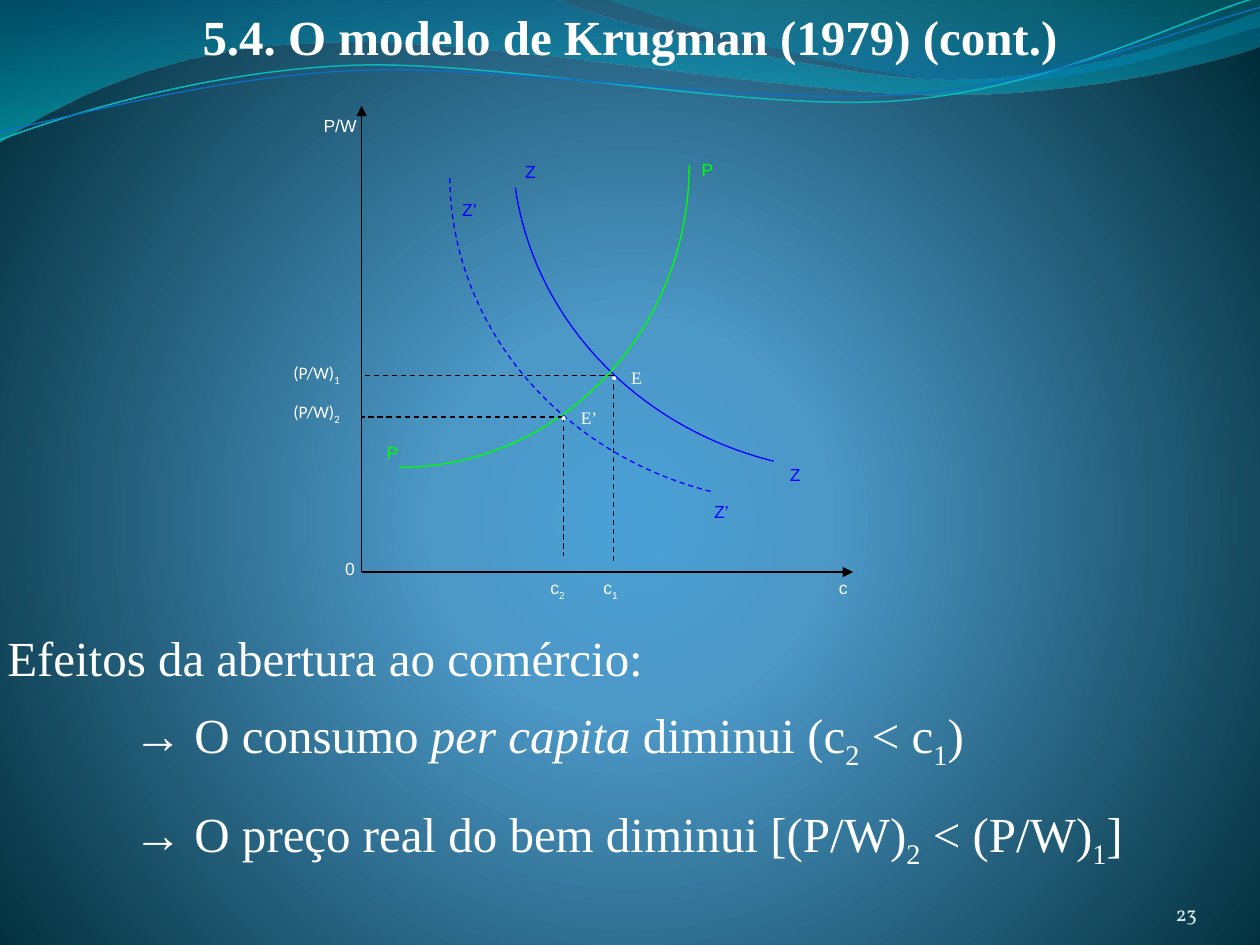
from copy import deepcopy

from pptx import Presentation
from pptx.dml.color import RGBColor
from pptx.enum.dml import MSO_LINE_DASH_STYLE as Dash
from pptx.enum.shapes import MSO_CONNECTOR as Connector
from pptx.enum.text import MSO_ANCHOR as Anchor, MSO_AUTO_SIZE as AutoSize, PP_ALIGN as Align
from pptx.oxml import parse_xml
from pptx.oxml.ns import nsdecls, qn
from pptx.util import Inches, Pt
from lxml.etree import SubElement

COLORS = {
    "text": "FFFFFF", "number": "D1EAEE", "axis": "000000",
    "zz": "0000FF", "pp": "00FF00",
    "glow": "4AA0D6", "mid": "4C98C7", "edge": "002C38",
    "wave_top": "0074A1", "wave_bottom": "00C6CF",
    "crest_top": "00A1A9", "crest_bottom": "008BBF",
    "teal_line": "0AB8BF", "blue_line": "0F6FC6",
}
SERIF = "Times New Roman"
TITLE_ONLY = 5


def gradient_xml(stops, direction):
    """Stops are (position %, colour name, opacity %)."""
    entries = "".join(
        f'<a:gs pos="{pos * 1000}"><a:srgbClr val="{COLORS[name]}">'
        f'<a:alpha val="{opacity * 1000}"/></a:srgbClr></a:gs>'
        for pos, name, opacity in stops)
    return (f'<a:gradFill {nsdecls("a")} rotWithShape="1"><a:gsLst>{entries}</a:gsLst>'
            f'{direction}</a:gradFill>')


def write(paragraph, text, size=10, font="Arial", color="text", bold=False,
          italic=False, baseline=0):
    run = paragraph.add_run()
    run.text = text
    run.font.size = Pt(size)
    run.font.name = font
    run.font.bold = bold
    run.font.italic = italic
    run.font.color.rgb = RGBColor.from_string(COLORS[color])
    if baseline:
        run.font._element.set("baseline", str(baseline * 1000))


def add_tab(paragraph, position):
    tabs = SubElement(paragraph._p.get_or_add_pPr(), qn("a:tabLst"))
    SubElement(tabs, qn("a:tab"), pos=str(Inches(position)), algn="l")


def bend(path, steps):
    """Turn the three line ends of each Bézier step into one curve."""
    lines = iter(path.findall(qn("a:lnTo")))
    for step in steps:
        first = next(lines)
        if len(step) == 6:
            first.tag = qn("a:cubicBezTo")
            for _ in range(2):
                extra = next(lines)
                first.append(extra[0])
                path.remove(extra)


class SlideBuilder:
    def __init__(self, slide):
        self.slide = slide
        self.shapes = slide.shapes

    def background(self, stops):
        circle = ('<a:path path="circle"><a:fillToRect l="10000" t="110000" '
                  'r="10000" b="100000"/></a:path>')
        self.slide.element.cSld.insert(0, parse_xml(
            f'<p:bg {nsdecls("p")}><p:bgPr>{gradient_xml(stops, circle)}'
            f'<a:effectLst {nsdecls("a")}/></p:bgPr></p:bg>'))

    def outline(self, start, steps, close=False):
        """Steps are line ends (x, y) or Bézier triples (x1, y1, x2, y2, x3, y3)."""
        points = [(Inches(step[i]), Inches(step[i + 1]))
                  for step in (start, *steps) for i in range(0, len(step), 2)]
        builder = self.shapes.build_freeform(*points[0], scale=1.0)
        builder.add_line_segments(points[1:], close=close)
        shape = builder.convert_to_shape()
        shape.shadow.inherit = False
        shape.fill.background()
        bend(next(shape.element.iter(qn("a:path"))), steps)
        return shape

    def ribbon(self, start, steps, stops):
        shape = self.outline(start, steps, close=True)
        shape.line.fill.background()
        properties = shape.element.spPr
        properties.replace(properties.find(qn("a:noFill")), parse_xml(
            gradient_xml(stops, '<a:lin ang="5400000" scaled="0"/>')))

    def style_line(self, line, color, width=0.75, dashed=False):
        line.color.rgb = RGBColor.from_string(COLORS[color])
        line.width = Pt(width)
        if dashed:
            line.dash_style = Dash.DASH

    def curve(self, start, steps, color, **style):
        self.style_line(self.outline(start, steps).line, color, **style)

    def arc(self, start, bezier, centre, color, **style):
        """A stroked arc plus its unstroked sector, closed over the centre."""
        shape = self.outline(start, [bezier, centre], close=True)
        stroke = next(shape.element.iter(qn("a:path")))
        sector = deepcopy(stroke)
        sector.set("stroke", "0")
        stroke.addnext(sector)
        stroke.set("fill", "none")
        for tag in ("a:lnTo", "a:close"):
            stroke.remove(stroke.find(qn(tag)))
        self.style_line(shape.line, color, **style)

    def line(self, start, end, arrow=False, dashed=False):
        connector = self.shapes.add_connector(
            Connector.STRAIGHT, *(Inches(v) for v in (*start, *end)))
        self.style_line(connector.line, "axis", dashed=dashed)
        properties = connector.element.spPr
        if arrow:
            SubElement(properties.find(qn("a:ln")), qn("a:tailEnd"), type="triangle")
        SubElement(properties, qn("a:effectLst"))

    def title(self, text, left, top, width, height, **style):
        title = self.shapes.title
        self.shapes.element.append(title.element)  # in front of the ribbons
        title.left, title.top, title.width, title.height = map(
            Inches, (left, top, width, height))
        frame = title.text_frame
        frame.vertical_anchor = Anchor.TOP
        frame.auto_size = AutoSize.NONE
        frame.paragraphs[0].alignment = Align.CENTER
        write(frame.paragraphs[0], text, **style)

    def text(self, parts, left, top, width=0.8, height=0.4, **style):
        """Parts are strings or (string, extra format) pairs."""
        frame = self.shapes.add_textbox(*map(Inches, (left, top, width, height))).text_frame
        frame.word_wrap = True
        for part in [parts] if isinstance(parts, str) else parts:
            content, extra = (part, {}) if isinstance(part, str) else part
            write(frame.paragraphs[0], content, **{**style, **extra})
        return frame

    def equilibrium(self, name, left, top):
        frame = self.text(f"•\t{name}", left, top, font=SERIF)
        frame.margin_left = Inches(0.18)
        add_tab(frame.paragraphs[0], 0.16)

    def page_number(self, text):
        frame = self.text(text, 8.67, 6.95, 0.83, size=12, font="Vollkorn", color="number")
        frame.margin_left = frame.margin_right = frame.margin_top = frame.margin_bottom = 0
        frame.vertical_anchor = Anchor.BOTTOM
        frame.paragraphs[0].alignment = Align.RIGHT


def sub(digit, baseline=-25, **style):
    return digit, {"baseline": baseline, **style}


def main():
    deck = Presentation()
    deck.slide_width, deck.slide_height = Inches(10), Inches(7.5)
    page = SlideBuilder(deck.slides.add_slide(deck.slide_layouts[TITLE_ONLY]))

    # Background and waves
    page.background([(0, "glow", 100), (25, "mid", 100), (100, "edge", 100)])
    page.ribbon((0, 0), [
        (4.4, -0.01), (4.76, 0.17, 6.64, 0.63, 7.58, 0.63),
        (8.53, 0.63, 9.58, 0.26, 10, 0.09), (10.01, 0.36),
        (9.83, 0.44, 8.7, 0.76, 7.46, 0.75), (6.22, 0.75, 3.82, 0.28, 2.57, 0.34),
        (1.29, 0.36, 0.46, 0.83, -0.01, 1.13),
    ], [(0, "wave_top", 45), (100, "wave_bottom", 55)])
    page.ribbon((4.79, -0.01), [
        (5.09, 0.11, 6.82, 0.62, 7.69, 0.65), (8.56, 0.69, 9.61, 0.32, 10, 0.21), (10, 0),
    ], [(0, "crest_top", 30), (80, "crest_bottom", 45)])
    page.curve((0, 1.11), [
        (0.48, 0.93, 1.58, 0.57, 2.77, 0.52), (3.95, 0.47, 5.93, 0.89, 7.13, 0.8),
        (8.33, 0.71, 9.38, 0.15, 9.98, -0.02)], "teal_line", width=0.85)
    page.curve((0, 1.04), [
        (0.47, 0.96, 1.64, 0.61, 2.83, 0.56), (4.03, 0.51, 5.97, 0.84, 7.17, 0.75),
        (8.36, 0.67, 9.41, 0.21, 10, 0.06)], "blue_line")

    # Title and effects of trade
    page.title("5.4. O modelo de Krugman (1979) (cont.)", 0, 0, 10, 0.57,
               size=28, font=SERIF, bold=True)
    page.text("Efeitos da abertura ao comércio:", -0.04, 4.93, 10, 0.57, size=28, font=SERIF)
    effects = [
        (5.54, ["\t→ O consumo ", ("per capita ", {"italic": True}), "diminui (c",
                sub("2"), " < c", sub("1"), ")"]),
        (6.33, ["\t→ O preço real do bem diminui [(P/W)", sub("2"), " < (P/W)",
                sub("1"), "]"]),
    ]
    for top, effect in effects:
        frame = page.text(effect, -0.04, top, 10, 0.57, size=28, font=SERIF)
        add_tab(frame.paragraphs[0], 1)
    page.page_number("23")

    # Axes
    origin = (2.87, 4.54)
    page.line(origin, (2.87, 0.84), arrow=True)
    page.line(origin, (6.77, 4.54), arrow=True)

    # ZZ, PP and Z'Z' curves
    page.arc((6.14, 3.66), (5.05, 3.39, 4.24, 2.53, 4.09, 1.49), (6.87, 1.15), "zz")
    page.arc((3.17, 3.71), (4.44, 3.71, 5.47, 2.63, 5.47, 1.31), (3.17, 1.31), "pp")
    page.arc((5.64, 3.9), (4.42, 3.59, 3.57, 2.56, 3.57, 1.39), (6.37, 1.39), "zz",
             dashed=True)

    # Equilibria with their guides to both axes
    for name, x, y, foot, label_top in [("E", 4.87, 2.98, 4.48, 2.86),
                                        ("E’", 4.47, 3.31, 4.41, 3.18)]:
        page.line((x, y), (x, foot), dashed=True)
        page.line((x, y), (origin[0], y), dashed=True)
        page.equilibrium(name, x - 0.2, label_top)

    # Axis and curve labels
    for label, left, top, color in [
        ("c", 6.56, 4.53, "text"), ("0", 2.64, 4.38, "text"), ("P/W", 2.47, 0.86, "text"),
        ("P", 2.97, 3.46, "pp"), ("P", 5.47, 1.21, "pp"),
        ("Z", 4.07, 1.23, "zz"), ("Z", 6.17, 3.63, "zz"),
        ("Z’", 3.57, 1.53, "zz"), ("Z’", 5.57, 3.93, "zz"),
    ]:
        page.text(label, left, top, color=color)
    for digit, consumption_left, price_top in [("1", 4.69, 2.81), ("2", 4.27, 3.12)]:
        page.text(["c", sub(digit, -30)], consumption_left, 4.53)
        price = page.text(["(P/W)", sub(digit, size=11)], 2.23, price_top, font="Calibri")
        price.paragraphs[0].space_before = Pt(3)
        price.paragraphs[0].space_after = Pt(10)

    deck.save("out.pptx")


if __name__ == "__main__":
    main()
